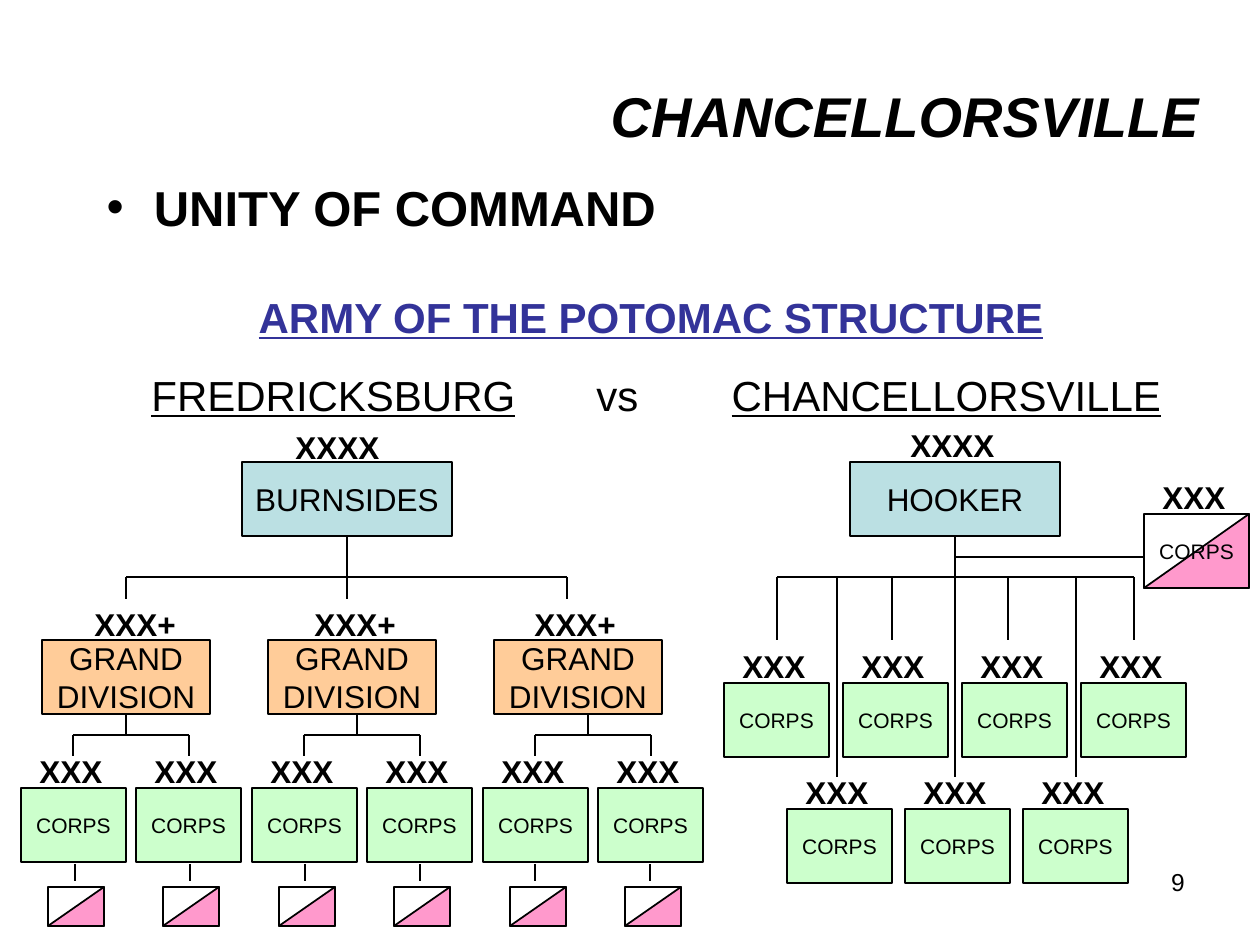
from dataclasses import dataclass

from lxml.etree import SubElement
from pptx import Presentation
from pptx.dml.color import RGBColor
from pptx.enum.shapes import MSO_CONNECTOR, MSO_SHAPE
from pptx.enum.text import MSO_ANCHOR, MSO_AUTO_SIZE, PP_ALIGN
from pptx.oxml.ns import qn
from pptx.util import Emu, Pt

EMU_PER_PX = 914400 / 126


def px(length):
    return Emu(round(length * EMU_PER_PX))


@dataclass(frozen=True)
class Theme:
    font: str = "Arial"
    ink: str = "000000"
    heading: str = "333399"
    army: str = "BBE0E3"
    division: str = "FFCC99"
    corps: str = "CCFFCC"
    cavalry: str = "FF99CC"
    title_size: int = 32
    bullet_size: int = 28
    heading_size: int = 24
    unit_size: int = 18
    number_size: int = 14
    corps_size: int = 12
    line_width: int = 1


class OrgChart:
    """Holds the theme and the slide being drawn; all lengths are px."""

    def __init__(self, slide, theme):
        self.slide = slide
        self.shapes = slide.shapes
        self.theme = theme

    def style(self, para, size, color=None, bold=False, italic=False):
        for span in para.runs:
            font = span.font
            font.name, font.size = self.theme.font, Pt(size)
            font.bold, font.italic = bold, italic
            font.color.rgb = RGBColor.from_string(color or self.theme.ink)

    def outline(self, line):
        line.color.rgb = RGBColor.from_string(self.theme.ink)
        line.width = Pt(self.theme.line_width)

    def placeholder(self, index, text, left, top, width, height, size, italic=False):
        box = self.slide.placeholders[index]
        box.left, box.top, box.width, box.height = map(px, (left, top, width, height))
        frame = box.text_frame
        frame.text = text
        frame.auto_size = MSO_AUTO_SIZE.NONE
        self.style(frame.paragraphs[0], size, bold=True, italic=italic)

    def text(self, text, left, top, width, height, size, bold=False,
             align=PP_ALIGN.LEFT, wrap=False):
        box = self.shapes.add_textbox(*map(px, (left, top, width, height)))
        frame = box.text_frame
        frame.text = text
        frame.word_wrap = wrap
        para = frame.paragraphs[0]
        para.alignment = align
        self.style(para, size, bold=bold)
        return frame

    def label(self, text, left, top, width=88):
        self.text(text, left, top, width, 50, self.theme.unit_size, bold=True)

    def shape(self, kind, left, top, width, height, fill=None):
        shape = self.shapes.add_shape(kind, *map(px, (left, top, width, height)))
        shape.shadow.inherit = False
        self.outline(shape.line)
        if fill:
            shape.fill.solid()
            shape.fill.fore_color.rgb = RGBColor.from_string(fill)
        else:
            shape.fill.background()
        return shape

    def unit(self, text, left, top, width, fill, size, wrap=True):
        box = self.shape(MSO_SHAPE.RECTANGLE, left, top, width, 74, fill)
        frame = box.text_frame
        frame.text = text
        frame.word_wrap = wrap
        frame.vertical_anchor = MSO_ANCHOR.MIDDLE
        para = frame.paragraphs[0]
        para.alignment = PP_ALIGN.CENTER
        self.style(para, size)
        return box

    def corps(self, left, top, fill):
        self.unit("CORPS", left, top, 105, fill, self.theme.corps_size)
        self.label("XXX", left + 6, top - 42)

    def cavalry_half(self, left, top, width, height):
        """Triangle that colours the lower right half of a cavalry symbol."""
        half = self.shape(MSO_SHAPE.RIGHT_TRIANGLE, left, top, width, height,
                          self.theme.cavalry)
        half.element.spPr.get_or_add_xfrm().set("flipH", "1")

    def cavalry_symbol(self, left, top):
        self.cavalry_half(left, top, 56, 39)
        self.shape(MSO_SHAPE.RECTANGLE, left, top, 56, 39)

    def line(self, x1, y1, x2, y2, below=None):
        """Straight line, joined to the bottom of the box `below` which it hangs."""
        line = self.shapes.add_connector(
            MSO_CONNECTOR.STRAIGHT, *map(px, (x1, y1, x2, y2)))
        self.outline(line.line)
        SubElement(line.element.spPr, qn("a:effectLst"))
        if below is not None:
            line.begin_connect(below, 2)

    def bracket(self, bus_y, leg_xs, leg_end):
        self.line(leg_xs[0], bus_y, leg_xs[-1], bus_y)
        for x in leg_xs:
            self.line(x, bus_y, x, leg_end)

    def heading(self):
        theme = self.theme
        frame = self.text("ARMY OF THE POTOMAC STRUCTURE", 63, 285, 1176, 139,
                          theme.heading_size, align=PP_ALIGN.CENTER, wrap=True)
        first = frame.paragraphs[0]
        self.style(first, theme.heading_size, theme.heading, bold=True)
        first.runs[0].font.underline = True

        battles = frame.add_paragraph()
        battles.space_before = Pt(16)
        for text in ("\t", "FREDRICKSBURG", "\tvs\t", "CHANCELLORSVILLE"):
            span = battles.add_run()
            span.text = text
            span.font.underline = "\t" not in text
        self.style(battles, theme.heading_size)
        stops = SubElement(battles._p.get_or_add_pPr(), qn("a:tabLst"))
        for center in (258, 542, 871):
            SubElement(stops, qn("a:tab"), pos=str(px(center)), algn="ctr")

    def army(self, commander, left, label_left, label_top):
        box = self.unit(commander, left, 462, 210, self.theme.army,
                        self.theme.unit_size, wrap=False)
        self.label("XXXX", label_left, label_top, 110)
        middle = left + 105
        self.line(middle, 536, middle, 577, below=box)

    def fredericksburg(self):
        theme = self.theme
        self.army("BURNSIDES", 242, 283, 422)
        self.bracket(577, (126, 347, 567), 599)
        for i in range(3):
            left, stem = 42 + 226 * i, 126 + 231 * i
            division = self.unit("GRAND DIVISION", left, 640, 168,
                                 theme.division, theme.unit_size)
            self.label("XXX+", 82 + 220 * i, 599, 107)
            centered = stem == left + 84
            self.line(stem, 714, stem, 735, below=division if centered else None)
            self.bracket(735, (stem - 53, stem + 63), 756)
            for corps_left in (stem - 105, stem + 10):
                self.corps(corps_left, 788, theme.corps)
                self.cavalry_symbol(corps_left + 27, 887)
        for i in range(6):
            x = 75 + 115 * i
            self.line(x, 864, x, 881)

    def chancellorsville(self):
        self.army("HOOKER", 850, 898, 420)
        self.bracket(577, (777, 892, 1008, 1134), 640)
        for x in (837, 955, 1076):
            self.line(x, 577, x, 777)
        for first, pitch, count, top in ((724, 119, 4, 683), (787, 118, 3, 809)):
            for i in range(count):
                self.corps(first + pitch * i, top, self.theme.corps)
        self.line(955, 557, 1144, 557)
        self.cavalry_half(1144, 514, 105, 74)
        self.corps(1144, 514, None)


def main():
    deck = Presentation()
    deck.slide_width, deck.slide_height = px(1260), px(945)
    theme = Theme()
    page = OrgChart(deck.slides.add_slide(deck.slide_layouts[1]), theme)
    page.placeholder(0, "CHANCELLORSVILLE", 590, 73, 630, 84,
                     theme.title_size, italic=True)
    page.placeholder(1, "UNITY OF COMMAND", 94, 171, 998, 86, theme.bullet_size)
    page.heading()
    page.fredericksburg()
    page.chancellorsville()
    page.text("9", 904, 861, 293, 66, theme.number_size,
              align=PP_ALIGN.RIGHT, wrap=True)
    deck.save("out.pptx")


if __name__ == "__main__":
    main()
